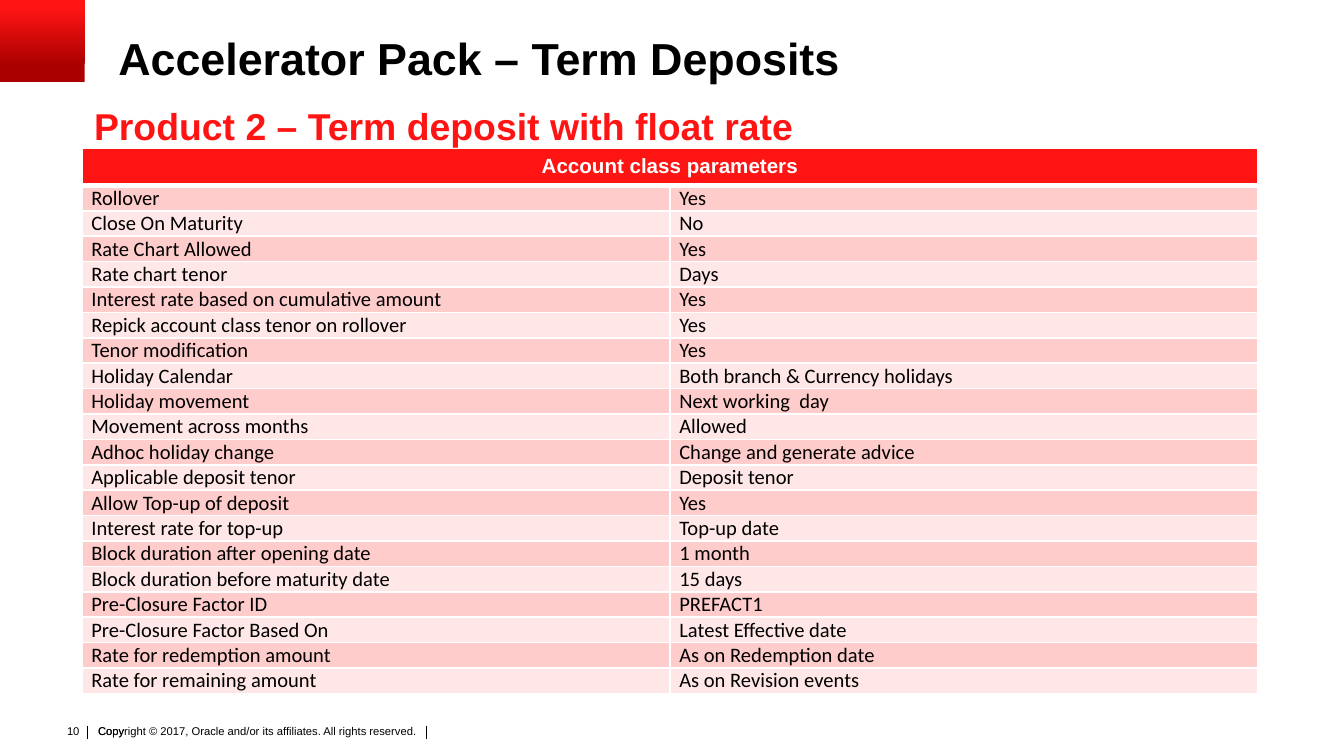
from typing import NamedTuple

from pptx import Presentation
from pptx.dml.color import RGBColor
from pptx.enum.shapes import MSO_CONNECTOR, MSO_SHAPE
from pptx.enum.text import MSO_ANCHOR, PP_ALIGN
from pptx.oxml import parse_xml
from pptx.oxml.ns import nsdecls
from pptx.util import Inches, Pt

BLACK, WHITE, RED, DARK = "000000", "FFFFFF", "FF1414", "AA0000"
BANDS = ("FFCCCC", "FFE7E7")


class Row(NamedTuple):
    name: str
    value: str


class Label(NamedTuple):
    text: str
    box: tuple
    pad: tuple
    style: dict


ROWS = [
    Row("Rollover", "Yes"),
    Row("Close On Maturity", "No"),
    Row("Rate Chart Allowed", "Yes"),
    Row("Rate chart tenor", "Days"),
    Row("Interest rate based on cumulative amount", "Yes"),
    Row("Repick account class tenor on rollover", "Yes"),
    Row("Tenor modification", "Yes"),
    Row("Holiday Calendar", "Both branch & Currency holidays"),
    Row("Holiday movement", "Next working  day"),
    Row("Movement across months", "Allowed"),
    Row("Adhoc holiday change", "Change and generate advice"),
    Row("Applicable deposit tenor", "Deposit tenor"),
    Row("Allow Top-up of deposit", "Yes"),
    Row("Interest rate for top-up", "Top-up date"),
    Row("Block duration after opening date", "1 month"),
    Row("Block duration before maturity date", "15 days"),
    Row("Pre-Closure Factor ID", "PREFACT1"),
    Row("Pre-Closure Factor Based On", "Latest Effective date"),
    Row("Rate for redemption amount", "As on Redemption date"),
    Row("Rate for remaining amount", "As on Revision events"),
]

FOOT = (0.69, 5.37, 2.74, 0.24)
SLIM = (0.04, 0.02, 0.04, 0.02)
LABELS = [
    Label("Copyright © 2017, Oracle and/or its affiliates. All rights reserved.",
          FOOT, SLIM, {"size": 6}),
    Label("Copy", FOOT, SLIM, {"size": 6}),
    Label("10", (0.39, 5.34, 0.3, 0.2), (0.1, 0.05, 0.1, 0.05),
          {"size": 6, "align": PP_ALIGN.RIGHT, "wrap": False}),
    Label("Product 2 – Term deposit with float rate", (0.7, 0.77, 9, 0.36),
          (0, 0, 0, 0), {"size": 20, "color": RED, "bold": True}),
]


def rgb(code: str) -> RGBColor:
    return RGBColor.from_string(code)


def write(frame, text: str, *, size: float, font="Arial", color=BLACK,
          bold=False, align=PP_ALIGN.LEFT, anchor=MSO_ANCHOR.TOP,
          wrap=True, lead=1.0, after=0) -> None:
    frame.word_wrap = wrap
    frame.vertical_anchor = anchor
    para = frame.paragraphs[0]
    para.alignment = align
    para.line_spacing = lead
    para.space_after = Pt(after)
    run = para.add_run()
    run.text = text
    run.font.name, run.font.size, run.font.bold = font, Pt(size), bold
    run.font.color.rgb = rgb(color)


def inset(item, pad: tuple) -> None:
    (item.margin_left, item.margin_top,
     item.margin_right, item.margin_bottom) = map(Inches, pad)


def add_label(slide, label: Label) -> None:
    box = slide.shapes.add_textbox(*map(Inches, label.box))
    inset(box.text_frame, label.pad)
    write(box.text_frame, label.text, **label.style)


def add_rule(slide, x: float) -> None:
    line = slide.shapes.add_connector(
        MSO_CONNECTOR.STRAIGHT, Inches(x), Inches(5.4), Inches(x), Inches(5.5))
    line.line.color.rgb = rgb(BLACK)
    line.line.width = Pt(0.5)
    props = line._element.spPr
    props.append(parse_xml(f"<a:effectLst {nsdecls('a')}/>"))


def paint(cell, color: str, top: float = 1, base: float = 1) -> None:
    """Fill a cell and give it white borders."""
    cell.fill.solid()
    cell.fill.fore_color.rgb = rgb(color)
    props = cell._tc.get_or_add_tcPr()
    sides = {"lnL": 1, "lnR": 1, "lnT": top, "lnB": base}
    for spot, (side, width) in enumerate(sides.items()):
        props.insert(spot, parse_xml(
            f'<a:{side} {nsdecls("a")} w="{Pt(width)}"><a:solidFill>'
            f'<a:srgbClr val="{WHITE}"/></a:solidFill></a:{side}>'))


def add_grid(slide, rows: list[Row]) -> None:
    head, step = 0.28, 0.18
    table = slide.shapes.add_table(
        len(rows) + 1, 2, Inches(0.61), Inches(1.1), Inches(8.75),
        Inches(head + step * len(rows))).table
    for line in table.rows:
        line.height = Inches(step)
    table.rows[0].height = Inches(head)

    # Header across both columns
    first = table.cell(0, 0)
    first.merge(table.cell(0, 1))
    for col in range(2):
        paint(table.cell(0, col), RED, base=3)
    write(first.text_frame, "Account class parameters", size=11, color=WHITE,
          bold=True, align=PP_ALIGN.CENTER)

    # Banded rows
    for num, row in enumerate(rows, 1):
        for col, text in enumerate(row):
            cell = table.cell(num, col)
            paint(cell, BANDS[(num - 1) % 2], top=3 if num == 1 else 1)
            inset(cell, (0.07, 0, 0.07, 0))
            write(cell.text_frame, text, size=11, font="Calibri", after=10)
            cell.vertical_anchor = MSO_ANCHOR.MIDDLE


def add_badge(slide) -> None:
    badge = slide.shapes.add_shape(
        MSO_SHAPE.RECTANGLE, 0, 0, Inches(0.63), Inches(0.61))
    badge.shadow.inherit = False
    badge.line.fill.background()
    badge.fill.gradient()
    badge.fill.gradient_angle = 90
    pairs = ((0.2, DARK), (0.9, RED))
    for stop, (place, color) in zip(badge.fill.gradient_stops, pairs):
        stop.position = place
        stop.color.rgb = rgb(color)


def main() -> None:
    deck = Presentation()
    deck.slide_width = Inches(10)
    deck.slide_height = deck.slide_width * 9 // 16
    slide = deck.slides.add_slide(deck.slide_layouts[5])

    # Corner block and title
    add_badge(slide)
    title = slide.shapes.title
    title.left, title.top = Inches(0.88), Inches(0.27)
    title.width, title.height = Inches(9), Inches(0.34)
    inset(title.text_frame, (0, 0, 0, 0))
    write(title.text_frame, "Accelerator Pack – Term Deposits", size=24,
          bold=True, lead=0.9)

    # Parameters, then subtitle and footer
    add_grid(slide, ROWS)
    for label in LABELS:
        add_label(slide, label)
    for x in (0.65, 3.17):
        add_rule(slide, x)

    deck.save("out.pptx")


if __name__ == "__main__":
    main()
